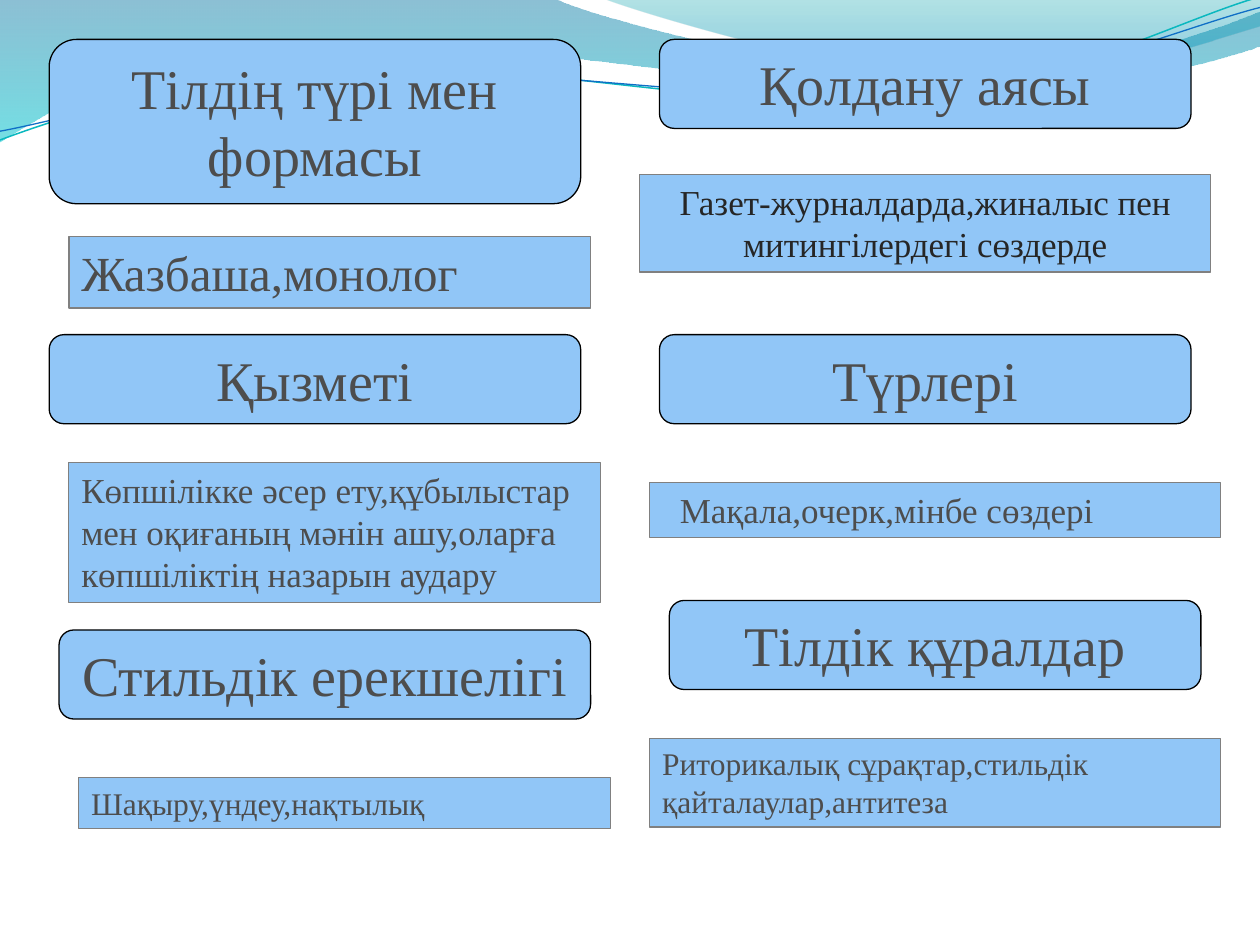
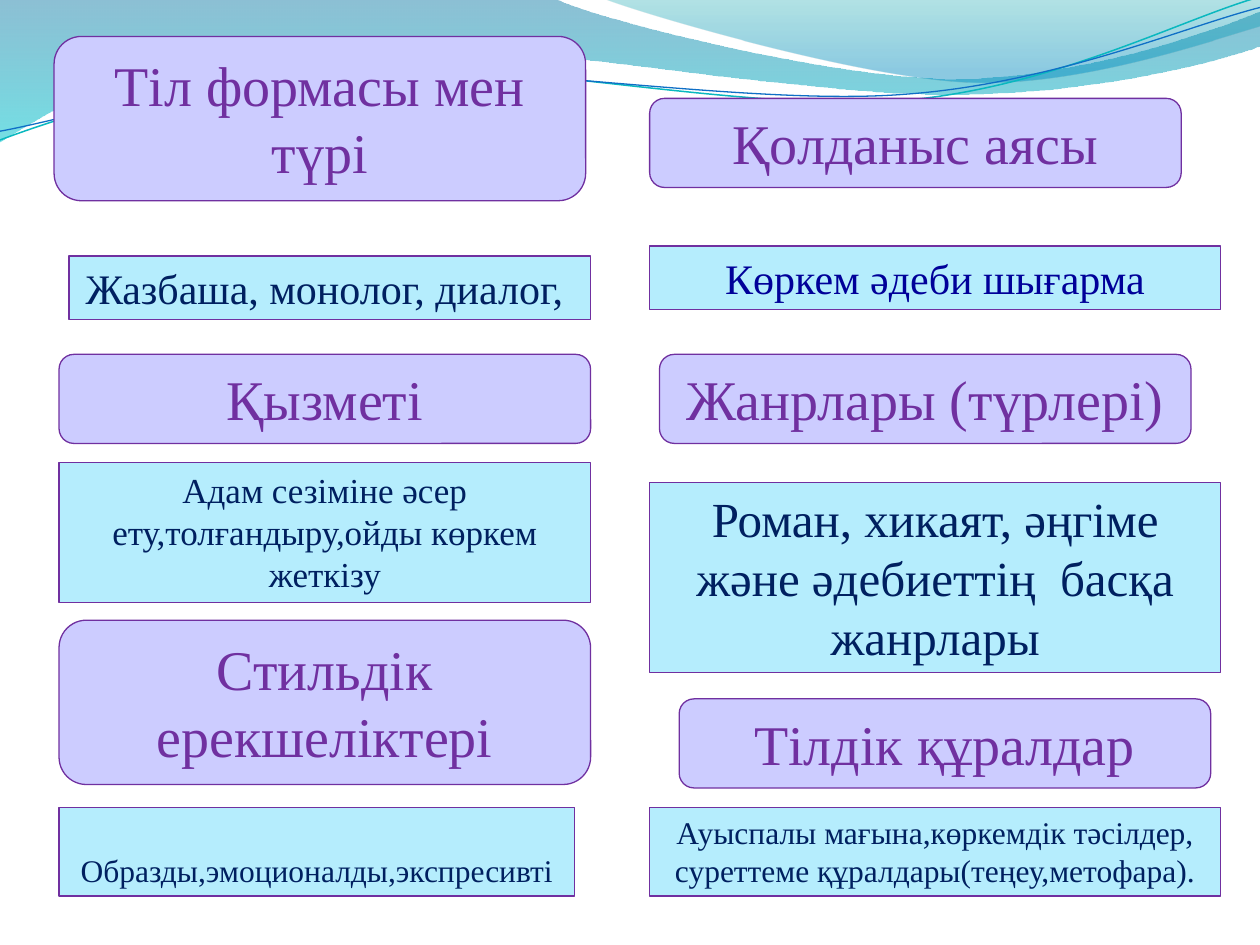
from math import cos, radians, sin
from pptx import Presentation
from pptx.dml.color import RGBColor
from pptx.enum.shapes import MSO_SHAPE as SHAPE
from pptx.enum.text import MSO_ANCHOR as ANCHOR, MSO_AUTO_SIZE as FIT, PP_ALIGN as ALIGN
from pptx.oxml.ns import qn
from pptx.util import Pt
from lxml.etree import SubElement

FONT = "Times New Roman"
GRID = 45 / 8
HEADER_W, LEFT_W, RIGHT_W = 54, 53, 58
TILT = 2.7

BLUE, GREY, DARK = "91C6F7", "4D4D4D", "262626"
LILAC, PURPLE, AQUA, NAVY = "CCCCFF", "7030A0", "B5EDFD", "002060"

TOP_BAND = [(0, 0), (317, -0.7), (343, 12, 478, 45, 546, 45),
            (614, 45, 690, 19, 720, 6.5), (720.7, 26), (708, 32, 626, 55, 537, 54),
            (448, 54, 275, 20, 185, 24.5), (93, 26, 33, 60, -0.7, 81.4)]
RIGHT_BAND = [(345, -0.7), (366.5, 8, 491, 44.6, 553.7, 47),
              (616, 49.7, 692, 23, 720, 15), (720, 0)]
TEAL_CURVE = [(0, 80), (34.6, 67, 114, 41, 199.4, 37.4),
              (284.4, 33.8, 427, 64, 513.4, 57.6), (599.8, 51, 675.4, 10.8, 718.6, -1.4)]
BLUE_CURVE = [(0, 75), (34, 69, 118, 44, 203.8, 40.3),
              (290, 36.7, 430, 60.5, 516, 54), (602, 48, 677.5, 15, 720, 4.3)]


def rgb(color):
    return RGBColor.from_string(color)


def pairs(part):
    return list(zip(part[::2], part[1::2]))


def turn(part, angle, center=(359.5, 41.6)):
    c, s = cos(radians(angle)), sin(radians(angle))
    moved = []
    for x, y in pairs(part):
        dx, dy = x - center[0], y - center[1]
        moved += [center[0] + dx * c - dy * s, center[1] + dx * s + dy * c]
    return moved


def add_outline(slide, outline, close):
    start, *points = [(Pt(x), Pt(y)) for part in outline for x, y in pairs(part)]
    builder = slide.shapes.build_freeform(*start)
    builder.add_line_segments(points, close=close)
    sp = builder.convert_to_shape()
    sp.shadow.inherit = False
    lines = iter(list(sp.element.iter(qn("a:lnTo"))))
    for part in outline[1:]:
        first = next(lines)
        if len(part) == 6:
            first.tag = qn("a:cubicBezTo")
            for _ in range(2):
                extra = next(lines)
                first.append(extra[0])
                extra.getparent().remove(extra)
    return sp


def add_band(slide, outline, stops):
    sp = add_outline(slide, outline, True)
    sp.line.fill.background()
    sp.fill.gradient()
    sp.fill.gradient_angle = 270
    for stop, (position, color, _) in zip(sp.fill.gradient_stops, stops):
        stop.position = position
        stop.color.rgb = rgb(color)
    for clr, (_, _, opacity) in zip(sp.element.iter(qn("a:srgbClr")), stops):
        SubElement(clr, qn("a:alpha")).set("val", str(opacity * 1000))
    return sp


def add_curve(slide, outline, color, width):
    sp = add_outline(slide, [turn(part, TILT) for part in outline], False)
    sp.rotation = 360 - TILT
    sp.fill.background()
    sp.line.color.rgb = rgb(color)
    sp.line.width = Pt(width)
    return sp


def add_waves(layout, slide):
    waves = [
        add_band(slide, TOP_BAND, [(0, "0074A1", 45), (1, "00C6CF", 55)]),
        add_band(slide, RIGHT_BAND, [(0, "00A1A9", 30), (0.8, "008BBF", 45)]),
        add_curve(slide, TEAL_CURVE, "0AB8BF", 0.85),
        add_curve(slide, BLUE_CURVE, "0F6FC6", 0.75),
    ]
    for number, sp in enumerate(waves, 101):
        sp.element.nvSpPr.cNvPr.set("id", str(number))
        layout.shapes.element.append(sp.element)


def add_box(slide, kind, col, row, cols, height, lines, size, fill, line, color, align):
    sp = slide.shapes.add_shape(kind, Pt(col * GRID), Pt(row * GRID), Pt(cols * GRID), Pt(height))
    sp.shadow.inherit = False
    sp.fill.solid()
    sp.fill.fore_color.rgb = rgb(fill)
    sp.line.color.rgb = rgb(line)
    sp.line.width = Pt(0.75)
    tf = sp.text_frame
    tf.word_wrap = True
    tf.auto_size = FIT.SHAPE_TO_FIT_TEXT
    tf.vertical_anchor = ANCHOR.TOP
    tf.text = "\n".join(lines)
    for p in tf.paragraphs:
        p.alignment = align
        p.font.name = FONT
        p.font.size = Pt(size)
        p.font.color.rgb = rgb(color)
    return sp


def add_header(slide, col, row, text, fill, line, color, rows=1):
    height = 50.9 if rows == 1 else 93.9
    add_box(slide, SHAPE.ROUNDED_RECTANGLE, col, row, HEADER_W, height, [text], 32,
            fill, line, color, ALIGN.CENTER)


def add_note(slide, col, row, cols, text, size, rows, fill, line, color, align):
    return add_box(slide, SHAPE.RECTANGLE, col, row, cols, rows * size * 1.21 + 7.2,
                   text.split("\n"), size, fill, line, color, align)


def build_publicistic(slide):
    for col, row, text, rows in [
        (5, 4, "Тілдің түрі мен формасы", 2),
        (67, 4, "Қолдану аясы", 1),
        (5, 34, "Қызметі", 1),
        (67, 34, "Түрлері", 1),
        (6, 64, "Стильдік ерекшелігі", 1),
        (68, 61, "Тілдік құралдар", 1),
    ]:
        add_header(slide, col, row, text, BLUE, "000000", GREY, rows)

    def note(col, row, cols, text, size, rows, color=GREY, align=ALIGN.LEFT):
        return add_note(slide, col, row, cols, text, size, rows, BLUE, "808080", color, align)

    note(7, 24, LEFT_W, "Жазбаша,монолог", 28, 1)
    note(65, 17.75, RIGHT_W, "Газет-журналдарда,жиналыс пен митингілердегі сөздерде",
         20, 2, DARK, ALIGN.CENTER)
    note(7, 47, HEADER_W, "Көпшілікке әсер ету,құбылыстар мен оқиғаның мәнін ашу,"
         "оларға көпшіліктің назарын аудару", 20, 3)
    kinds = note(66, 49, RIGHT_W, "Мақала,очерк,мінбе сөздері", 20, 1)
    kinds.text_frame.margin_left = Pt(17.2)
    note(8, 79, HEADER_W, "Шақыру,үндеу,нақтылық", 18, 1)
    note(66, 75, RIGHT_W, "Риторикалық сұрақтар,стильдік қайталаулар,антитеза", 18, 2)


def build_literary(slide):
    for col, row, text, rows in [
        (5.5, 3.7, "Тіл формасы мен түрі", 2),
        (66, 10, "Қолданыс аясы", 1),
        (6, 36, "Қызметі", 1),
        (67, 36, "Жанрлары (түрлері)", 1),
        (6, 63, "Стильдік ерекшеліктері", 2),
        (69, 71, "Тілдік құралдар", 1),
    ]:
        add_header(slide, col, row, text, LILAC, PURPLE, PURPLE, rows)

    def note(col, row, cols, text, size, rows, color=NAVY):
        return add_note(slide, col, row, cols, text, size, rows, AQUA, PURPLE, color, ALIGN.CENTER)

    note(7, 26, LEFT_W, "Жазбаша, монолог, диалог, ", 24, 1)
    note(66, 25, RIGHT_W, "Көркем әдеби шығарма", 24, 1, "000099")
    note(6, 47, HEADER_W, "Адам сезіміне әсер ету,толғандыру,ойды көркем жеткізу", 20, 3)
    note(66, 49, RIGHT_W, "Роман, хикаят, әңгіме және әдебиеттің  басқа жанрлары", 28, 3)
    features = note(6, 82, 52.4, "Образды,эмоционалды,экспресивті", 18, 2)
    features.text_frame.margin_top = Pt(25.2)
    note(66, 82, RIGHT_W, "Ауыспалы мағына,көркемдік тәсілдер,\n"
         "суреттеме құралдары(теңеу,метофара).", 18, 2)


def main():
    prs = Presentation()
    prs.slide_width, prs.slide_height = Pt(720), Pt(540)
    blank = prs.slide_layouts[6]
    publicistic, literary = (prs.slides.add_slide(blank) for _ in range(2))
    add_waves(blank, publicistic)
    build_publicistic(publicistic)
    build_literary(literary)
    prs.save("out.pptx")


if __name__ == "__main__":
    main()
